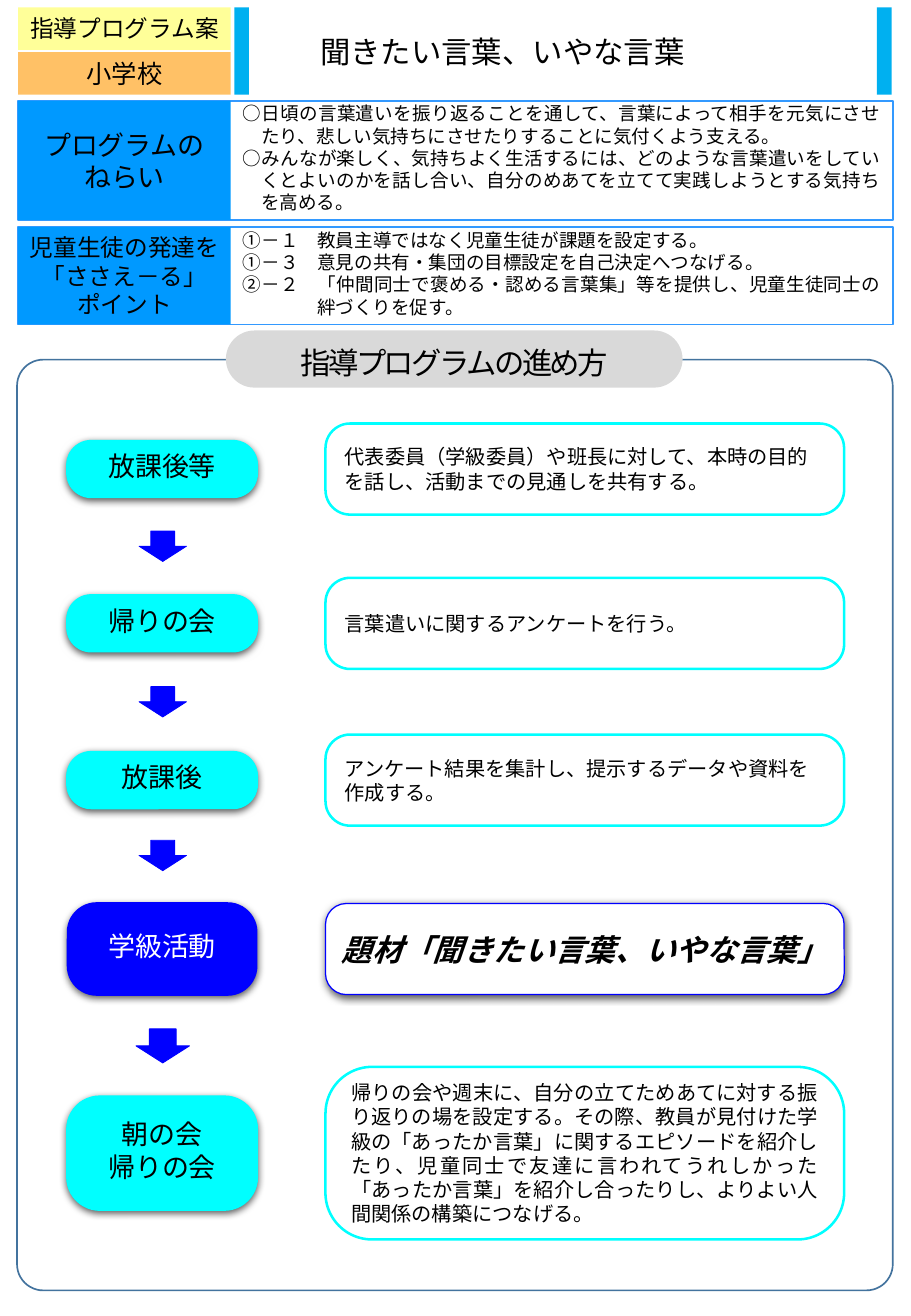
from dataclasses import dataclass

import pptx
import pptx.dml.color
import pptx.enum.lang
import pptx.enum.shapes
import pptx.enum.text
import pptx.oxml
import pptx.oxml.ns
import pptx.util
from lxml import etree

Inches, Pt = pptx.util.Inches, pptx.util.Pt
RGB = pptx.dml.color.RGBColor.from_string
SHAPE = pptx.enum.shapes.MSO_SHAPE
ALIGN = pptx.enum.text.PP_ALIGN
qn = pptx.oxml.ns.qn


@dataclass(frozen=True)
class Theme:
    font: str = "Noto Sans CJK JP"
    label_font: str = "Calibri"
    black: str = "000000"
    white: str = "FFFFFF"
    yellow: str = "FFFF99"
    orange: str = "FF9900"
    sky: str = "00B0F0"
    azure: str = "0099FF"
    frame: str = "3399FF"
    steel: str = "43739E"
    grey: str = "D9D9D9"
    cyan: str = "00FFFF"
    blue: str = "0000FF"
    heading: int = 18
    step: int = 16
    school: int = 15
    label: int = 14
    body: int = 12
    note: int = 11


T = Theme()

AIMS = [
    "○日頃の言葉遣いを振り返ることを通して、言葉によって相手を元気にさせたり、悲しい気持ちにさせたりすることに気付くよう支える。",
    "○みんなが楽しく、気持ちよく生活するには、どのような言葉遣いをしていくとよいのかを話し合い、自分のめあてを立てて実践しようとする気持ちを高める。",
]
POINTS = [
    "①－１　教員主導ではなく児童生徒が課題を設定する。",
    "①－３　意見の共有・集団の目標設定を自己決定へつなげる。",
    "②－２　「仲間同士で褒める・認める言葉集」等を提供し、児童生徒同士の絆づくりを促す。",
]

# label, text, centre from the panel's top, badge height, badge corner, card height, main step
STEPS = [
    ("放課後等", "代表委員（学級委員）や班長に対して、本時の目的を話し、活動までの見通しを共有する。",
     0.9, 0.47, 0.43, 0.75, False),
    ("帰りの会", "言葉遣いに関するアンケートを行う。", 2.17, 0.47, 0.43, 0.75, False),
    ("放課後", "アンケート結果を集計し、提示するデータや資料を作成する。",
     3.46, 0.47, 0.43, 0.75, False),
    ("学級活動", "題材「聞きたい言葉、いやな言葉」", 4.85, 0.77, 0.32, 0.75, True),
    ("朝の会\n帰りの会",
     "帰りの会や週末に、自分の立てためあてに対する振り返りの場を設定する。その際、教員が見付けた学級の「あったか言葉」に関する"
     "エピソードを紹介したり、児童同士で友達に言われてうれしかった「あったか言葉」を紹介し合ったりし、よりよい人間関係の構築につなげる。",
     6.53, 0.94, 0.29, 1.42, False),
]


def put_text(shape, text, size, font=T.font, color=T.black, align=ALIGN.CENTER, wrap=True,
             insets=(0.1, 0.05, 0.1, 0.05), bold=False, italic=False, line=1.0,
             tracking=None, hanging=0):
    tf = shape.text_frame
    tf.word_wrap = wrap
    tf.auto_size = pptx.enum.text.MSO_AUTO_SIZE.NONE
    tf.vertical_anchor = pptx.enum.text.MSO_ANCHOR.MIDDLE
    tf.margin_left, tf.margin_top, tf.margin_right, tf.margin_bottom = map(Inches, insets)
    for i, content in enumerate(text.split("\n")):
        p = tf.add_paragraph() if i else tf.paragraphs[0]
        p.alignment, p.line_spacing = align, line
        p.space_before = p.space_after = Pt(0)
        if hanging:
            pPr = p._p.get_or_add_pPr()
            pPr.set("marL", str(Inches(hanging)))
            pPr.set("indent", str(-Inches(hanging)))
            etree.SubElement(pPr, qn("a:buNone"))
        r = p.add_run()
        r.text = content
        f = r.font
        f.size, f.name, f.bold, f.italic = Pt(size), font, bold, italic
        f.color.rgb = RGB(color)
        f.language_id = pptx.enum.lang.MSO_LANGUAGE_ID.JAPANESE
        rPr = r._r.get_or_add_rPr()
        etree.SubElement(rPr, qn("a:ea")).set("typeface", T.font)
        if tracking:
            rPr.set("spc", str(int(tracking * 100)))


def add_shape(s, kind, box, fill=None, line=None, weight=1, corner=None, alpha=None, shadow=False):
    sp = s.shapes.add_shape(kind, *map(Inches, box))
    sp.shadow.inherit = False
    if corner is not None:
        sp.adjustments[0] = corner
    if fill:
        sp.fill.solid()
        sp.fill.fore_color.rgb = RGB(fill)
    else:
        sp.fill.background()
    if line:
        sp.line.color.rgb = RGB(line)
        sp.line.width = Pt(weight)
    else:
        sp.line.fill.background()
    if alpha:
        clr = sp._element.spPr.find(qn("a:solidFill")).find(qn("a:srgbClr"))
        etree.SubElement(clr, qn("a:alpha")).set("val", str(alpha * 1000))
    if shadow:
        sp._element.spPr.find(qn("a:effectLst")).append(pptx.oxml.parse_xml(
            f'<a:outerShdw {pptx.oxml.ns.nsdecls("a")} blurRad="{Pt(4.5)}" dist="{Pt(1.5)}" '
            f'dir="5400000" rotWithShape="0"><a:srgbClr val="{T.black}">'
            '<a:alpha val="63000"/></a:srgbClr></a:outerShdw>'))
    return sp


def place(shape, box):
    shape.left, shape.top, shape.width, shape.height = map(Inches, box)


def add_header(s, box):
    x, y, w, h = box
    label_w, label_h, bar_w = 1.75, 0.35, 0.12
    program = add_shape(s, SHAPE.RECTANGLE, (x, y, label_w, label_h), T.yellow)
    put_text(program, "指導プログラム案", T.label, T.label_font, wrap=False)
    school = add_shape(s, SHAPE.RECTANGLE, (x, y + h - label_h, label_w, label_h), T.orange, alpha=60)
    put_text(school, "小学校", T.school, T.label_font, wrap=False)
    bar_x, end_x = x + label_w + 0.03, x + w - bar_w
    for left in (bar_x, end_x):
        add_shape(s, SHAPE.RECTANGLE, (left, y, bar_w, h), T.sky)
    title_x = bar_x + bar_w
    place(s.shapes.title, (title_x, y, end_x - title_x, h))
    put_text(s.shapes.title, "聞きたい言葉、いやな言葉", T.heading, insets=(0.1, 0.05, 1.1, 0.05))


def add_list_row(s, box, label, size, body, items, hanging):
    """Framed row: a coloured label on the left and a hanging list on the right."""
    x, y, w, h = box
    label_w = 1.75
    add_shape(s, SHAPE.RECTANGLE, box, line=T.frame)
    tag = add_shape(s, SHAPE.RECTANGLE, (x, y, label_w, h), T.azure)
    put_text(tag, label, size, T.label_font, wrap=False)
    place(body, (x + label_w, y, w - label_w, h - 0.04))
    put_text(body, "\n".join(items), T.note, align=ALIGN.JUSTIFY, hanging=hanging)


def add_step(s, box, label, text, badge_h, corner, main):
    """One step: a badge on the left, centred on the card that fills the right."""
    x, y, w, h = box
    badge_w, card_w = 1.57, 4.27
    badge = add_shape(s, SHAPE.ROUNDED_RECTANGLE, (x, y + (h - badge_h) / 2, badge_w, badge_h),
                      T.blue if main else T.cyan, None if main else T.cyan, 0.75, corner, shadow=True)
    put_text(badge, label, T.step, color=T.white if main else T.black, wrap=False,
             insets=(0.1, 0, 0.1, 0.05))
    card = add_shape(s, SHAPE.ROUNDED_RECTANGLE, (x + w - card_w, y, card_w, h), T.white,
                     T.blue if main else T.cyan, 0.75 if main else 1.5,
                     0.23 if main else 0.27, shadow=main)
    if main:
        put_text(card, text, T.heading, wrap=False, bold=True, italic=True)
    else:
        put_text(card, text, T.body, align=ALIGN.JUSTIFY if h > 1 else ALIGN.LEFT)


def add_flow(s, box):
    x, y, w, h = box
    add_shape(s, SHAPE.ROUNDED_RECTANGLE, box, line=T.steel, corner=0.03)
    heading = add_shape(s, SHAPE.ROUNDED_RECTANGLE, (x + 1.72, y - 0.24, 3.76, 0.47), T.grey, corner=0.5)
    put_text(heading, "指導プログラムの進め方", T.heading, line=1.2, tracking=-1.5)
    previous_bottom = None
    for label, text, centre, badge_h, corner, card_h, main in STEPS:
        badge_top = y + centre - badge_h / 2
        if previous_bottom:
            last = label == STEPS[-1][0]
            aw, ah = (0.44, 0.28) if last else (0.39, 0.25)
            middle = (previous_bottom + badge_top) / 2
            add_shape(s, SHAPE.DOWN_ARROW, (x + 1.2 - aw / 2, middle - ah / 2, aw, ah),
                      T.blue, T.blue, 0.5)
        add_step(s, (x + 0.41, y + centre - card_h / 2, 6.4, card_h), label, text, badge_h, corner, main)
        previous_bottom = badge_top + badge_h


def main():
    prs = pptx.Presentation()
    prs.slide_width, prs.slide_height = Inches(7.5), Inches(10.83)
    s = prs.slides.add_slide(prs.slide_layouts[3])
    aims, points = s.placeholders[1], s.placeholders[2]
    add_header(s, (0.15, 0.06, 7.19, 0.72))
    add_list_row(s, (0.15, 0.83, 7.2, 0.98), "プログラムの\nねらい", T.step, aims, AIMS, 0.15)
    add_list_row(s, (0.15, 1.87, 7.2, 0.8), "児童生徒の発達を\n「ささえ－る」\nポイント", T.label,
                 points, POINTS, 0.61)
    add_flow(s, (0.14, 2.96, 7.21, 7.66))
    prs.save("out.pptx")


if __name__ == "__main__":
    main()
